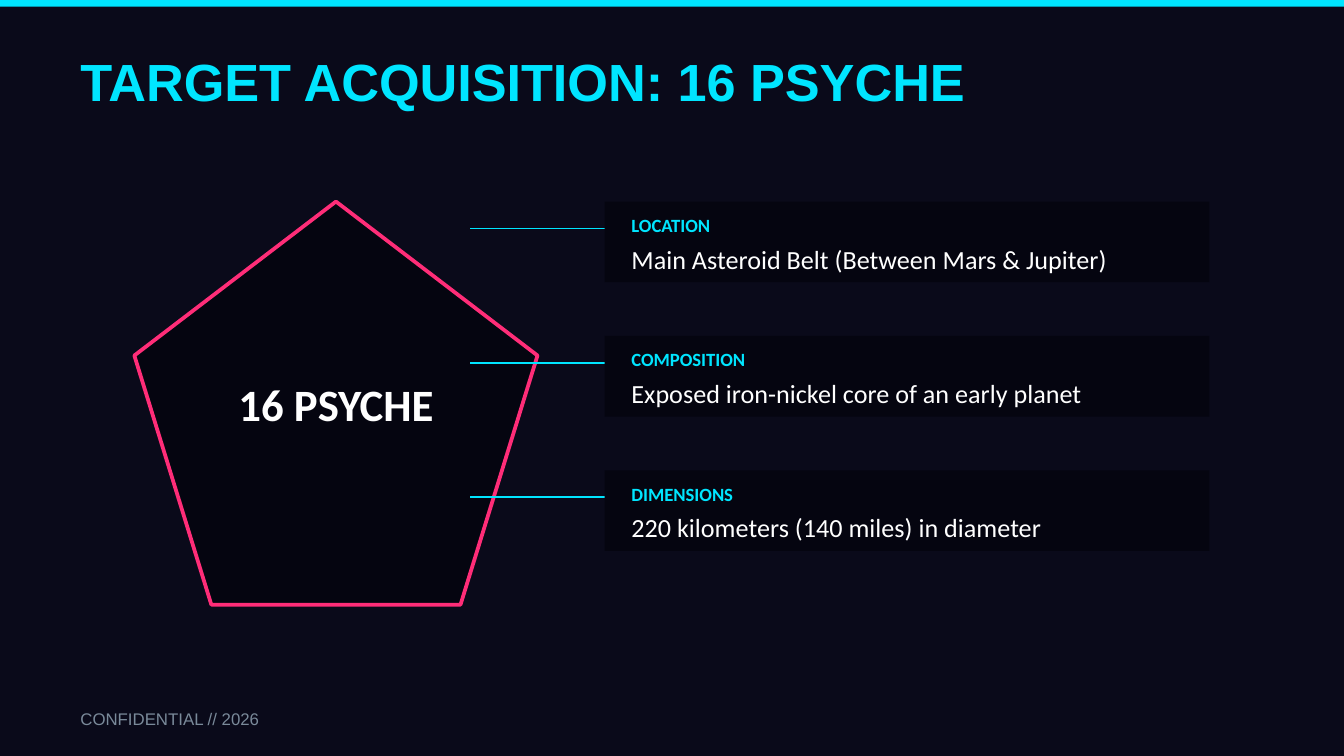
from dataclasses import dataclass

from pptx import Presentation
from pptx import util as u
from pptx.dml.color import RGBColor
from pptx.enum import shapes, text
from pptx.oxml.ns import qn
from lxml import etree

EMU_PER_PX = 4572  # 200 px to the inch


@dataclass(frozen=True)
class Theme:
    background: str = "0A0A1A"
    panel: str = "050510"
    accent: str = "00E5FF"
    outline: str = "FF2D78"
    body: str = "FFFFFF"
    muted: str = "7A8A9A"
    heading_font: str = "Arial"
    body_font: str = "Calibri"
    title_size: int = 28
    target_size: int = 24
    fact_size: int = 14
    label_size: int = 10
    footer_size: int = 9


THEME = Theme()

FACTS = [
    ("LOCATION", "Main Asteroid Belt (Between Mars & Jupiter)"),
    ("COMPOSITION", "Exposed iron-nickel core of an early planet"),
    ("DIMENSIONS", "220 kilometers (140 miles) in diameter"),
]
FACT_TOP, FACT_PITCH = 300, 200


def px(*lengths):
    return [u.Emu(n * EMU_PER_PX) for n in lengths]


def rgb(color):
    return RGBColor.from_string(color)


def add_block(s, kind, box, fill, outline=None):
    sp = s.shapes.add_shape(kind, *px(*box))
    sp.shadow.inherit = False
    sp.fill.solid()
    sp.fill.fore_color.rgb = rgb(fill)
    if outline:
        sp.line.color.rgb = rgb(outline)
        sp.line.width = u.Pt(2)
    else:
        sp.line.fill.background()


def add_text(s, box, words, size, color, font=THEME.body_font, bold=False,
             align=text.PP_ALIGN.LEFT):
    tf = s.shapes.add_textbox(*px(*box)).text_frame
    tf.word_wrap = True
    tf.vertical_anchor = text.MSO_ANCHOR.MIDDLE
    tf.text = words
    p = tf.paragraphs[0]
    p.alignment = align
    r = p.runs[0]
    r.font.name = font
    r.font.size = u.Pt(size)
    r.font.bold = bold
    r.font.color.rgb = rgb(color)


def add_leader(s, x1, x2, y):
    line = s.shapes.add_connector(shapes.MSO_CONNECTOR.STRAIGHT, *px(x1, y, x2, y))
    line.line.color.rgb = rgb(THEME.accent)
    line.line.width = u.Pt(1)
    etree.SubElement(line._element.spPr, qn("a:effectLst"))


def add_fact(s, top, label, fact):
    """Draw one leader line with its panel, label and fact."""
    add_leader(s, 700, 900, top + 40)
    add_block(s, shapes.MSO_SHAPE.RECTANGLE, (900, top, 900, 120), THEME.panel)
    add_text(s, (920, top + 10, 860, 50), label, THEME.label_size, THEME.accent, bold=True)
    add_text(s, (920, top + 60, 860, 50), fact, THEME.fact_size, THEME.body)


def add_target(s):
    add_block(s, shapes.MSO_SHAPE.REGULAR_PENTAGON, (200, 300, 600, 600),
              THEME.panel, THEME.outline)
    add_text(s, (300, 560, 400, 80), "16 PSYCHE", THEME.target_size, THEME.body,
             bold=True, align=text.PP_ALIGN.CENTER)


def main():
    prs = Presentation()
    prs.slide_width, prs.slide_height = px(2000, 1125)
    s = prs.slides.add_slide(prs.slide_layouts[6])
    s.background.fill.solid()
    s.background.fill.fore_color.rgb = rgb(THEME.background)

    add_block(s, shapes.MSO_SHAPE.RECTANGLE, (0, 0, 2000, 10), THEME.accent)
    add_text(s, (100, 60, 1800, 120), "TARGET ACQUISITION: 16 PSYCHE",
             THEME.title_size, THEME.accent, THEME.heading_font, bold=True)
    add_target(s)
    for i, (label, fact) in enumerate(FACTS):
        add_fact(s, FACT_TOP + i * FACT_PITCH, label, fact)
    add_text(s, (100, 1040, 1000, 60), "CONFIDENTIAL // 2026",
             THEME.footer_size, THEME.muted, THEME.heading_font)
    prs.save("out.pptx")


if __name__ == "__main__":
    main()
